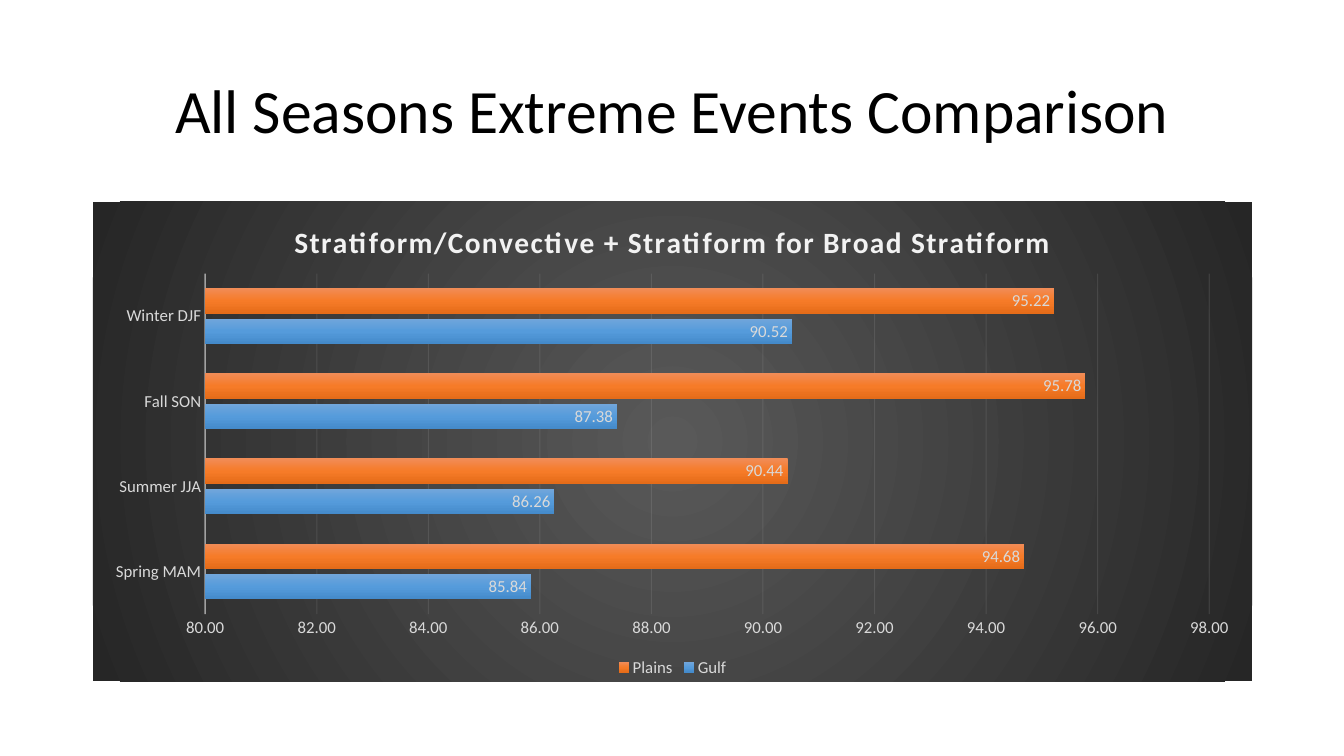
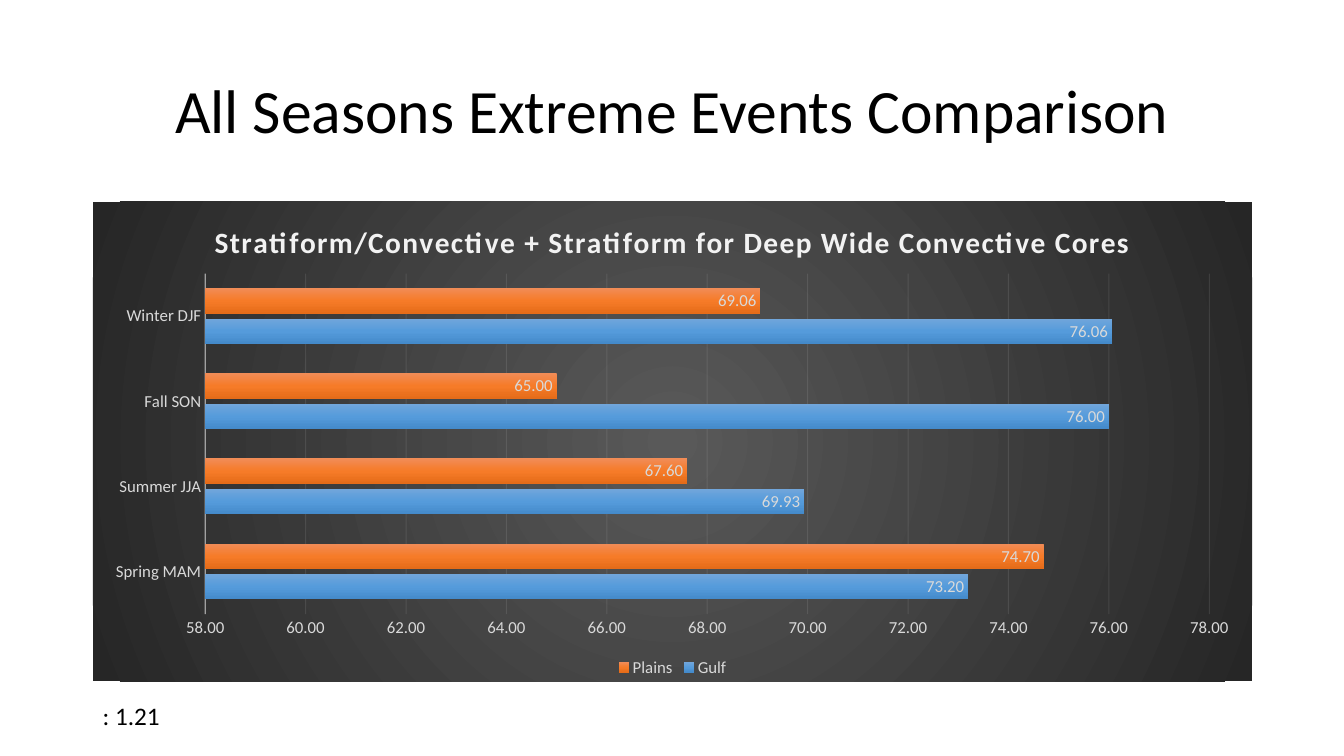
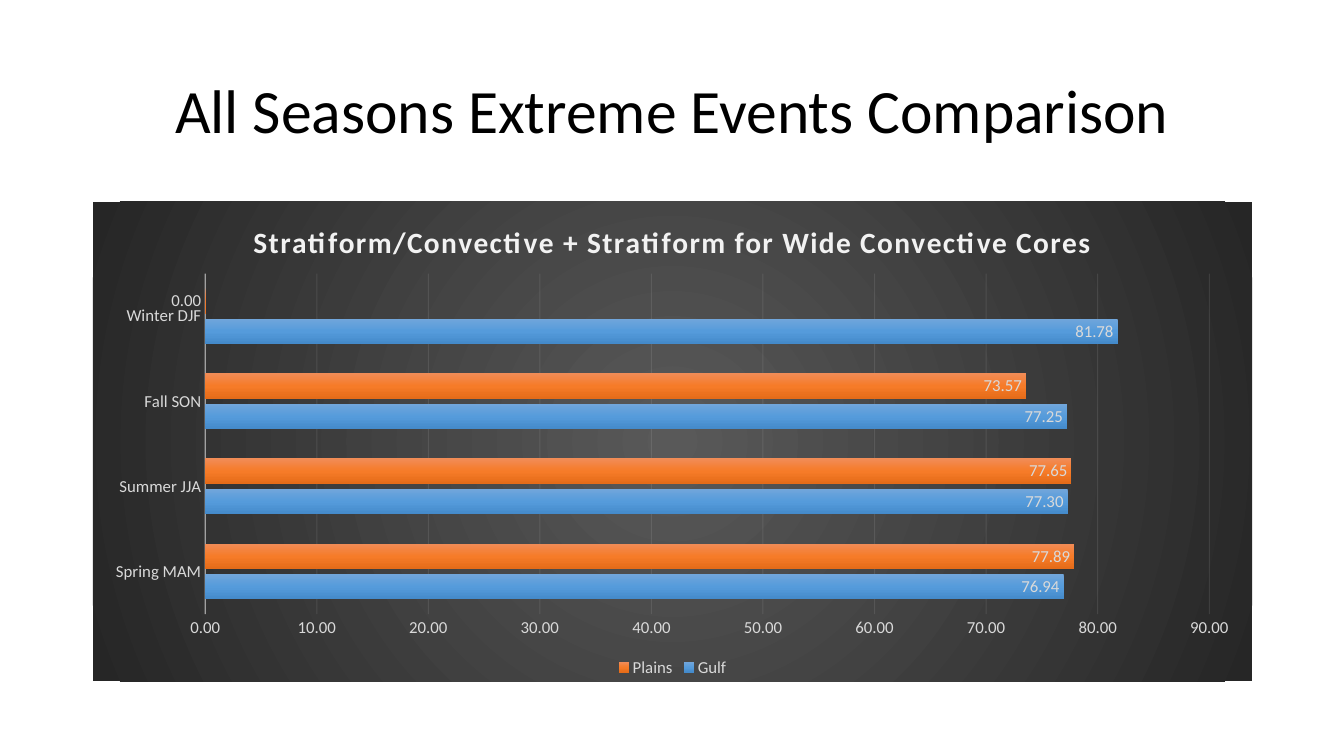
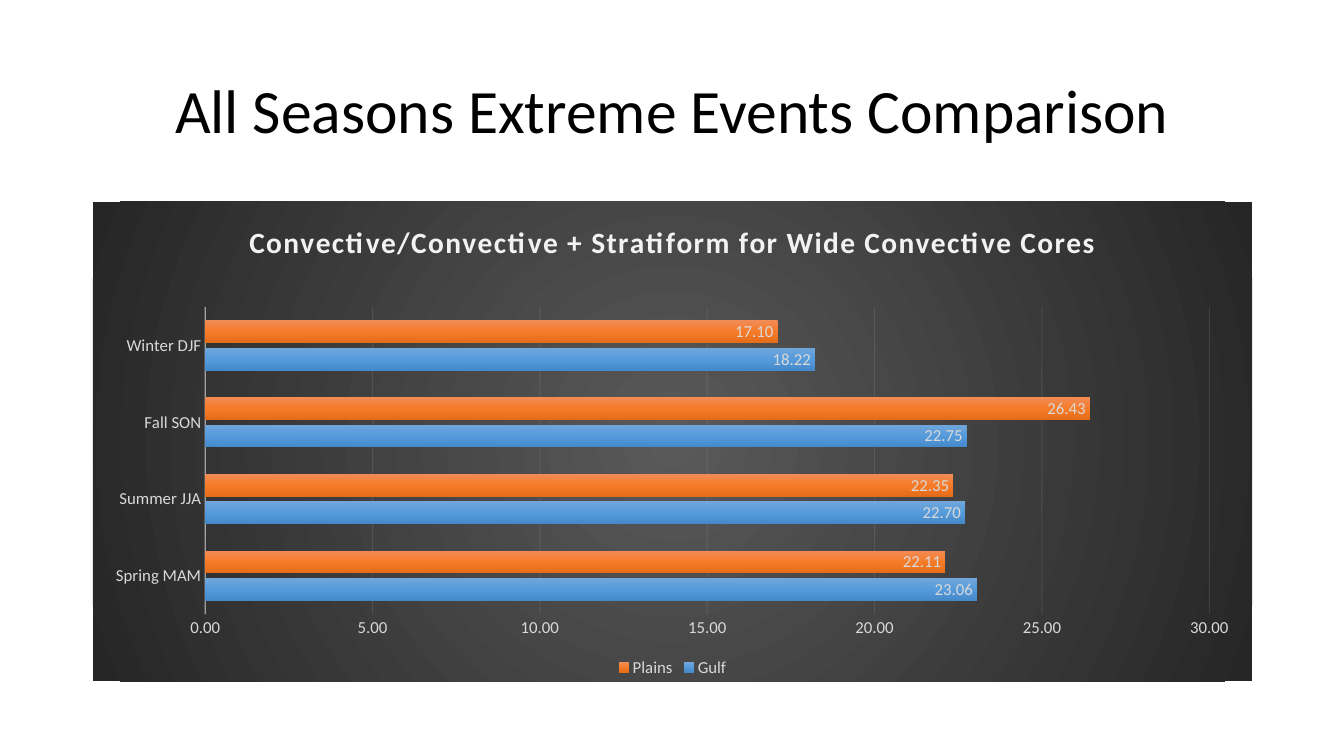
from lxml.etree import SubElement
from pptx import Presentation
from pptx.chart.data import CategoryChartData
from pptx.dml.color import RGBColor
from pptx.enum.chart import XL_CHART_TYPE, XL_LABEL_POSITION, XL_LEGEND_POSITION, XL_TICK_MARK
from pptx.enum.text import MSO_ANCHOR, PP_ALIGN
from pptx.oxml import parse_xml
from pptx.oxml.ns import nsdecls, qn
from pptx.util import Inches, Pt

FONT = "Calibri"
COLORS = {"ink": "000000", "label": "D9D9D9", "rule": "F2F2F2"}
GRADIENTS = {
    "panel": ("595959", "262626"),
    "Gulf": ("71A6DB", "559BDB", "448ACA"),
    "Plains": ("F18C57", "F67B28", "E56C19"),
}
LINEAR = '<a:lin ang="5400000" scaled="0"/>'
RADIAL = '<a:path path="circle"><a:fillToRect l="50000" t="50000" r="50000" b="50000"/></a:path>'
HEADING = "All Seasons Extreme Events Comparison"
SEASONS = ("Spring MAM", "Summer JJA", "Fall SON", "Winter DJF")
LEFT, WIDTH = 0.92, 11.5
PLOT_TOP, PLOT_BOTTOM = 0.15, 0.86
COMPARISONS = [
    {
        "caption": "Stratiform/Convective + Stratiform for Broad Stratiform",
        "Gulf": (85.84, 86.26, 87.38, 90.52),
        "Plains": (94.68, 90.44, 95.78, 95.22),
        "scale": (80, 98, 2),
    },
    {
        "caption": "Stratiform/Convective + Stratiform for Deep Wide Convective Cores",
        "Gulf": (73.2, 69.93, 76, 76.06),
        "Plains": (74.7, 67.6, 65, 69.06),
        "scale": (58, 78, 2),
        "remark": ": 1.21",
    },
    {
        "caption": "Stratiform/Convective + Stratiform for Wide Convective Cores",
        "Gulf": (76.94, 77.3, 77.25, 81.78),
        "Plains": (77.89, 77.65, 73.57, 0),
        "scale": (0, 90, 10),
    },
    {
        "caption": "Convective/Convective + Stratiform for Wide Convective Cores",
        "Gulf": (23.06, 22.7, 22.75, 18.22),
        "Plains": (22.11, 22.35, 26.43, 17.1),
        "scale": (0, 30, 5),
        "plot_top": 0.22,
    },
]


class Deck:
    """Holds the shared style and the current slide."""

    def __init__(self):
        self.show = Presentation()
        self.show.slide_width, self.show.slide_height = Inches(13.33), Inches(7.5)
        self.slide = None

    def style(self, font, size, color, bold=False):
        font.name, font.size, font.bold = FONT, Pt(size), bold
        font.color.rgb = RGBColor.from_string(COLORS[color])

    def add_words(self, paragraph, words, size, color="ink", bold=False):
        run = paragraph.add_run()
        run.text = words
        self.style(run.font, size, color, bold)
        return run

    def gradient(self, name, direction):
        colors = GRADIENTS[name]
        step = 100000 // (len(colors) - 1)
        stops = "".join(
            f'<a:gs pos="{i * step}"><a:srgbClr val="{color}"/></a:gs>'
            for i, color in enumerate(colors)
        )
        return parse_xml(
            f'<a:gradFill {nsdecls("a")} rotWithShape="1"><a:gsLst>{stops}</a:gsLst>{direction}</a:gradFill>'
        )

    def rule(self, line, width, opacity):
        line.width = Pt(width)
        line.color.rgb = RGBColor.from_string(COLORS["rule"])
        tint = line._get_or_add_ln().find(".//" + qn("a:srgbClr"))
        SubElement(tint, qn("a:alpha")).set("val", str(opacity * 1000))

    def new_slide(self, heading):
        self.slide = self.show.slides.add_slide(self.show.slide_layouts[5])
        title = self.slide.shapes.title
        title.left, title.top = Inches(LEFT), Inches(0.4)
        title.width, title.height = Inches(WIDTH), Inches(1.45)
        title.text_frame.vertical_anchor = MSO_ANCHOR.MIDDLE
        paragraph = title.text_frame.paragraphs[0]
        paragraph.alignment, paragraph.line_spacing = PP_ALIGN.CENTER, 0.9
        self.add_words(paragraph, heading, 44)

    def remark(self, words):
        box = self.slide.shapes.add_textbox(Inches(LEFT), Inches(6.9), Inches(11.25), Inches(0.71))
        box.text_frame.word_wrap = True
        self.add_words(box.text_frame.paragraphs[0], words, 18)

    def bar_chart(self, comparison):
        data = CategoryChartData(number_format="0.00")
        data.categories = SEASONS
        for region in ("Gulf", "Plains"):
            data.add_series(region, comparison[region])
        chart = self.slide.shapes.add_chart(
            XL_CHART_TYPE.BAR_CLUSTERED, Inches(LEFT), Inches(2), Inches(WIDTH), Inches(4.76), data
        ).chart
        self.style(chart.font, 10, "ink")
        self.panel(chart)
        self.caption(chart, comparison["caption"])
        self.axes(chart, comparison["scale"])
        self.bars(chart.plots[0])
        self.place_plot(chart, comparison.get("plot_top", PLOT_TOP))
        chart.has_legend = True
        chart.legend.position = XL_LEGEND_POSITION.BOTTOM
        chart.legend.include_in_layout = False
        self.style(chart.legend.font, 12, "label")

    def panel(self, chart):
        backdrop = parse_xml(f'<c:spPr {nsdecls("c", "a")}><a:ln><a:noFill/></a:ln></c:spPr>')
        backdrop.insert(0, self.gradient("panel", RADIAL))
        chart._chartSpace.find(qn("c:chart")).addnext(backdrop)

    def caption(self, chart, words):
        chart.has_title = True
        chart.chart_title.include_in_layout = False
        run = self.add_words(chart.chart_title.text_frame.paragraphs[0], words, 21, "rule", True)
        run.font._element.set("spc", "100")

    def axes(self, chart, scale):
        seasons, percent = chart.category_axis, chart.value_axis
        for axis in (seasons, percent):
            axis.major_tick_mark = axis.minor_tick_mark = XL_TICK_MARK.NONE
            self.style(axis.tick_labels.font, 12, "label")
        self.rule(seasons.format.line, 1, 54)
        percent.minimum_scale, percent.maximum_scale, percent.major_unit = scale
        percent.tick_labels.number_format = "0.00"
        percent.tick_labels.number_format_is_linked = False
        percent.format.line.fill.background()
        percent.has_major_gridlines = True
        self.rule(percent.major_gridlines.format.line, 0.75, 10)

    def bars(self, plot):
        plot.gap_width, plot.overlap, plot.vary_by_categories = 115, -20, False
        for region in plot.series:
            region._element.get_or_add_spPr().append(self.gradient(region.name, LINEAR))
            labels = region.data_labels
            labels.show_value = True
            labels.position = XL_LABEL_POSITION.INSIDE_END
            labels.number_format, labels.number_format_is_linked = "0.00", False
            self.style(labels.font, 12, "label")

    def place_plot(self, chart, top):
        area = chart._chartSpace.find(".//" + qn("c:plotArea"))
        for automatic in area.findall(qn("c:layout")):
            area.remove(automatic)
        bounds = {"x": 0.097, "y": top, "w": 0.866, "h": PLOT_BOTTOM - top}
        sizes = "".join(f'<c:{key} val="{value:.3f}"/>' for key, value in bounds.items())
        area.insert(0, parse_xml(
            f'<c:layout {nsdecls("c")}><c:manualLayout><c:layoutTarget val="inner"/>'
            f'<c:xMode val="edge"/><c:yMode val="edge"/>{sizes}</c:manualLayout></c:layout>'
        ))


def main():
    deck = Deck()
    for comparison in COMPARISONS:
        deck.new_slide(HEADING)
        deck.bar_chart(comparison)
        if "remark" in comparison:
            deck.remark(comparison["remark"])
    deck.show.save("out.pptx")


if __name__ == "__main__":
    main()
